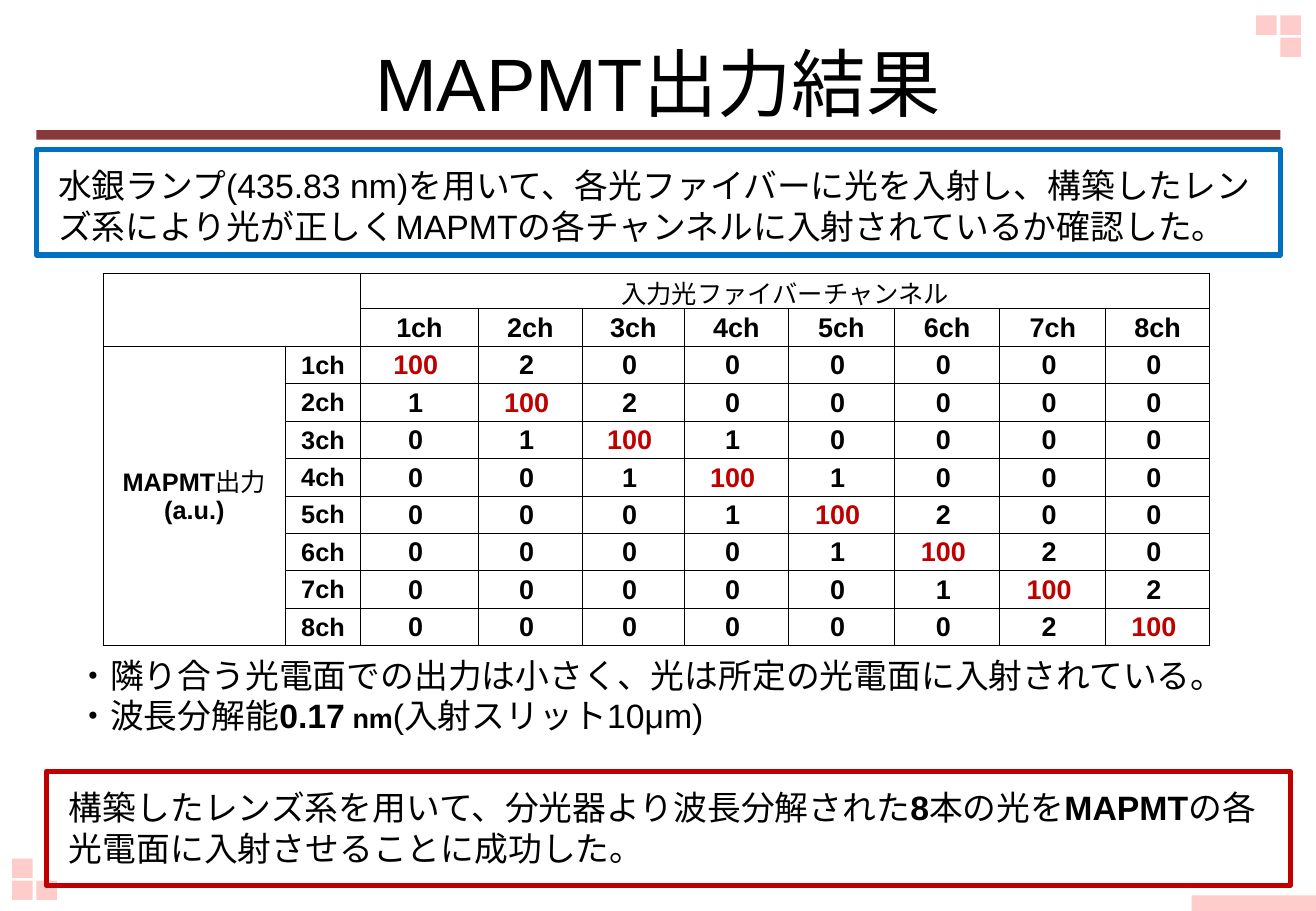
from lxml.etree import SubElement
from pptx import Presentation
from pptx.dml.color import RGBColor
from pptx.enum.lang import MSO_LANGUAGE_ID
from pptx.enum.shapes import MSO_SHAPE
from pptx.enum.text import MSO_ANCHOR, MSO_AUTO_SIZE, PP_ALIGN
from pptx.oxml.ns import qn
from pptx.util import Pt

BLACK, RED, BLUE, PINK, BROWN = "000000", "C00000", "0070C0", "FFCCCC", "883A3A"
LATIN, KANJI = "Arial", "Noto Sans CJK JP"
BOLD = {"bold": True}


def color(code):
    return RGBColor.from_string(code)


class Page:
    base = {"name": LATIN, "size": Pt(20), "bold": False,
            "language_id": MSO_LANGUAGE_ID.JAPANESE}
    inset = {"margin_left": Pt(1.2), "margin_top": Pt(0.6), "margin_right": Pt(1.2),
             "margin_bottom": 0, "vertical_anchor": MSO_ANCHOR.MIDDLE}

    def __init__(self, slide):
        self.slide = slide

    def put(self, item, style):
        for key, value in style.items():
            setattr(item, key, value)

    def words(self, para, parts, align=PP_ALIGN.LEFT, tint=BLACK, **style):
        """Fill a paragraph with (text, format) parts; "\n" is a line break."""
        para.alignment = align
        for text, extra in parts:
            if text == "\n":
                para.add_line_break()
                continue
            run = para.add_run()
            run.text = text
            look = {**self.base, **style, **extra}
            self.put(run.font, look)
            run.font.color.rgb = color(tint)
            SubElement(run.font._element, qn("a:ea")).set("typeface", look["name"])

    def rect(self, x, y, w, h, fill=None, line=None):
        box = self.slide.shapes.add_shape(
            MSO_SHAPE.RECTANGLE, Pt(x), Pt(y), Pt(w), Pt(h))
        box.shadow.inherit = False
        if fill:
            box.fill.solid()
            box.fill.fore_color.rgb = color(fill)
        else:
            box.fill.background()
        if line:
            box.line.color.rgb = color(line)
            box.line.width = Pt(3)
        else:
            box.line.fill.background()

    def text(self, x, y, w, h, lines, anchor=MSO_ANCHOR.TOP,
             fit=MSO_AUTO_SIZE.SHAPE_TO_FIT_TEXT, **style):
        box = self.slide.shapes.add_textbox(Pt(x), Pt(y), Pt(w), Pt(h))
        frame = box.text_frame
        self.put(frame, {"word_wrap": True, "auto_size": fit, "vertical_anchor": anchor})
        for i, parts in enumerate(lines):
            para = frame.add_paragraph() if i else frame.paragraphs[0]
            self.words(para, parts, **style)

    def grid(self, x, y, cols, rows):
        shape = self.slide.shapes.add_table(
            len(rows), len(cols), Pt(x), Pt(y), Pt(sum(cols)), Pt(sum(rows)))
        table = shape.table
        self.put(table, {"first_row": False, "horz_banding": False})
        for col, width in zip(table.columns, cols):
            col.width = Pt(width)
        for row, height in zip(table.rows, rows):
            row.height = Pt(height)
        for cell in table.iter_cells():
            self.put(cell, self.inset)
            self.edge(cell)
            cell.fill.background()
            end = cell.text_frame.paragraphs[0]._p.get_or_add_endParaRPr()
            end.set("sz", "1500")
        return table

    def edge(self, cell):
        props = cell._tc.get_or_add_tcPr()
        for side in ("lnL", "lnR", "lnT", "lnB"):
            line = SubElement(props, qn(f"a:{side}"), w=str(Pt(0.5)))
            fill = SubElement(line, qn("a:solidFill"))
            SubElement(fill, qn("a:srgbClr"), val=BLACK)

    def cell(self, cell, parts, size=15, **style):
        self.words(cell.text_frame.paragraphs[0], parts, PP_ALIGN.CENTER,
                   size=Pt(size), **style)


deck = Presentation()
deck.slide_width, deck.slide_height = Pt(780), Pt(540)
page = Page(deck.slides.add_slide(deck.slide_layouts[6]))

# Title bar and corner squares
page.rect(21.6, 77.2, 737.3, 5.6, BROWN)
page.rect(706.3, 530.8, 73.7, 9.2, PINK)
for x, y in ((758.9, 9.2), (744.5, 9.2), (758.9, 22.3),
             (7.2, 522), (21.6, 522), (7.2, 509)):
    page.rect(x, y, 12.2, 11.5, PINK)

# Title
page.text(38.9, 3.6, 702, 90, [[("MAPMT出力結果", {})]], MSO_ANCHOR.MIDDLE,
          MSO_AUTO_SIZE.NONE, align=PP_ALIGN.CENTER, size=Pt(44))

# Conclusion and aim
page.text(33.8, 463, 725, 55.4, [[
    ("構築したレンズ系を用いて、分光器より波長分解された", {}), ("8", BOLD),
    ("本の光を", {}), ("MAPMT", BOLD),
    ("の各光電面に入射させることに成功した。", {})]])
page.text(27.4, 94.3, 725, 55.4, [[
    ("水銀ランプ(435.83 nm)を用いて、各光ファイバーに光を入射し、"
     "構築したレンズ系により光が正しくMAPMTの各チャンネルに入射されているか確認した。", {})]])

# Output table: 100 on the diagonal, leakage only beside it
upper = [2, 2, 1, 1, 2, 2, 2]
lower = [1, 1, 1, 1, 1, 1, 2]
count = 8
table = page.grid(61.2, 162,
                  [108, 44.5, 69.9, 61.7, 60.4, 61.7, 62.7, 62.7, 62.7, 61.7],
                  [21] + [22.2] * 9)
for top, left, low, right in ((0, 0, 1, 1), (0, 2, 0, 9), (2, 0, 9, 0)):
    table.cell(top, left).merge(table.cell(low, right))
page.cell(table.cell(0, 2), [("入力光ファイバーチャンネル", {})], name=KANJI)
page.cell(table.cell(2, 0), [("MAPMT", BOLD), ("出力", {}), ("\n", {}), ("(a.u.)", BOLD)])
for i in range(count):
    label = [(f"{i + 1}ch", BOLD)]
    page.cell(table.cell(1, i + 2), label, 16)
    page.cell(table.cell(i + 2, 1), label)
    for j in range(count):
        value = 100 if i == j else 0
        if j == i + 1:
            value = upper[i]
        elif j == i - 1:
            value = lower[j]
        page.cell(table.cell(i + 2, j + 2), [(f"{value} ", BOLD)], 16,
                  tint=RED if i == j else BLACK)

# Findings
page.text(38.2, 384.5, 737.3, 55.4, [
    [("・隣り合う光電面での出力は小さく、光は所定の光電面に入射されている。", {})],
    [("・波長分解能", {}), ("0.17", BOLD), (" nm", {"bold": True, "size": Pt(16)}),
     ("(入射スリット10μm)", {})]])

# Frames
page.rect(27.4, 457.2, 737.3, 67.7, line=RED)
page.rect(21.6, 88.6, 737.3, 62.6, line=BLUE)

deck.save("out.pptx")
